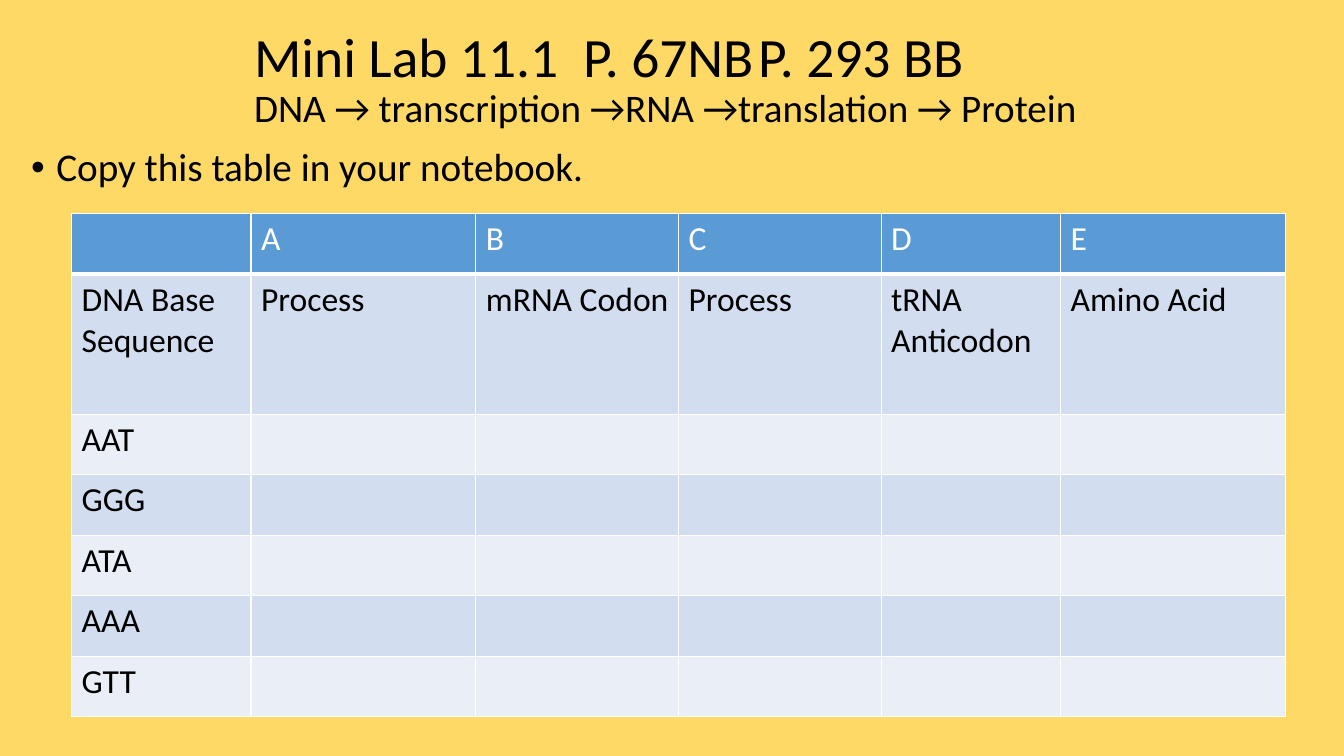
import lxml.etree
import pptx
import pptx.dml.color
import pptx.enum.text
import pptx.oxml.ns
import pptx.util

EMU_PER_PX = 9144
FONT = "Calibri"
GOLD = pptx.dml.color.RGBColor(0xFF, 0xD9, 0x66)
BLACK = pptx.dml.color.RGBColor(0x00, 0x00, 0x00)
WHITE = pptx.dml.color.RGBColor(0xFF, 0xFF, 0xFF)
HEADER_BLUE = pptx.dml.color.RGBColor(0x5B, 0x9B, 0xD5)
DARK_BAND = pptx.dml.color.RGBColor(0xD2, 0xDE, 0xEF)
LIGHT_BAND = pptx.dml.color.RGBColor(0xEA, 0xEF, 0xF7)

COLUMN_WIDTHS = [178, 223, 201, 201, 178, 223]
ROW_HEIGHTS = [60, 139] + [60] * 5
TABLE_ROWS = [
    ["", "A", "B", "C", "D", "E"],
    ["DNA Base Sequence", "Process", "mRNA Codon", "Process", "tRNA Anticodon", "Amino Acid"],
] + [[triplet] + [""] * 5 for triplet in ("AAT", "GGG", "ATA", "AAA", "GTT")]


def px(length):
    return pptx.util.Emu(length * EMU_PER_PX)


class LabSlide:
    def __init__(self, presentation):
        self.slide = presentation.slides.add_slide(presentation.slide_layouts[5])
        background = self.slide.background.fill
        background.solid()
        background.fore_color.rgb = GOLD

    def run(self, paragraph, text, size, color=BLACK):
        run = paragraph.add_run()
        run.text = text
        run.font.name = FONT
        run.font.size = pptx.util.Pt(size)
        run.font.bold = False
        run.font.color.rgb = color

    def title(self, left, top, width, height, lines):
        shape = self.slide.shapes.title
        shape.left, shape.top, shape.width, shape.height = map(px, (left, top, width, height))
        frame = shape.text_frame
        frame.auto_size = pptx.enum.text.MSO_AUTO_SIZE.NONE
        frame.vertical_anchor = pptx.enum.text.MSO_ANCHOR.MIDDLE
        paragraph = frame.paragraphs[0]
        paragraph.alignment = pptx.enum.text.PP_ALIGN.LEFT
        paragraph.line_spacing = 0.9
        for index, (text, size) in enumerate(lines):
            if index:
                paragraph.add_line_break()
            self.run(paragraph, text, size)

    def bullet(self, left, top, width, height, text, size, indent):
        shape = self.slide.shapes.add_textbox(*map(px, (left, top, width, height)))
        shape.text_frame.word_wrap = True
        paragraph = shape.text_frame.paragraphs[0]
        paragraph.line_spacing = 0.9
        paragraph.space_before = pptx.util.Pt(10)
        properties = paragraph._p.get_or_add_pPr()
        properties.set("marL", str(px(indent)))
        properties.set("indent", str(px(-indent)))
        for tag, key, value in (("a:buFont", "typeface", "Arial"), ("a:buChar", "char", "•")):
            element = lxml.etree.SubElement(properties, pptx.oxml.ns.qn(tag))
            element.set(key, value)
        self.run(paragraph, text, size)

    def borders(self, cell, bottom_width):
        properties = cell._tc.get_or_add_tcPr()
        for side, width in (("L", 1), ("R", 1), ("T", 1), ("B", bottom_width)):
            line = lxml.etree.SubElement(properties, pptx.oxml.ns.qn(f"a:ln{side}"))
            line.set("w", str(pptx.util.Pt(width)))
            fill = lxml.etree.SubElement(line, pptx.oxml.ns.qn("a:solidFill"))
            color = lxml.etree.SubElement(fill, pptx.oxml.ns.qn("a:srgbClr"))
            color.set("val", str(WHITE))

    def table(self, left, top, widths, heights, rows, size):
        frame = self.slide.shapes.add_table(
            len(rows), len(widths), px(left), px(top), px(sum(widths)), px(sum(heights)))
        table = frame.table
        table.horz_banding = False
        for column, width in zip(table.columns, widths):
            column.width = px(width)
        for row_index, (row, height, texts) in enumerate(zip(table.rows, heights, rows)):
            row.height = px(height)
            is_header = row_index == 0
            band = DARK_BAND if row_index % 2 else LIGHT_BAND
            for cell, text in zip(row.cells, texts):
                self.borders(cell, 3 if is_header else 1)
                cell.fill.solid()
                cell.fill.fore_color.rgb = HEADER_BLUE if is_header else band
                if text:
                    self.run(cell.text_frame.paragraphs[0], text, size,
                             WHITE if is_header else BLACK)


def main():
    presentation = pptx.Presentation()
    presentation.slide_width = px(1333)
    presentation.slide_height = px(750)
    lab = LabSlide(presentation)
    lab.title(242, 17, 900, 125, [
        ("Mini Lab 11.1  P. 67NB\tP. 293 BB", 39.6),
        ("DNA → transcription →RNA →translation → Protein", 27.9),
    ])
    lab.bullet(21, 142, 1221, 534, "Copy this table in your notebook.", 28, 25)
    lab.table(71, 212, COLUMN_WIDTHS, ROW_HEIGHTS, TABLE_ROWS, 24)
    presentation.save("out.pptx")


if __name__ == "__main__":
    main()
